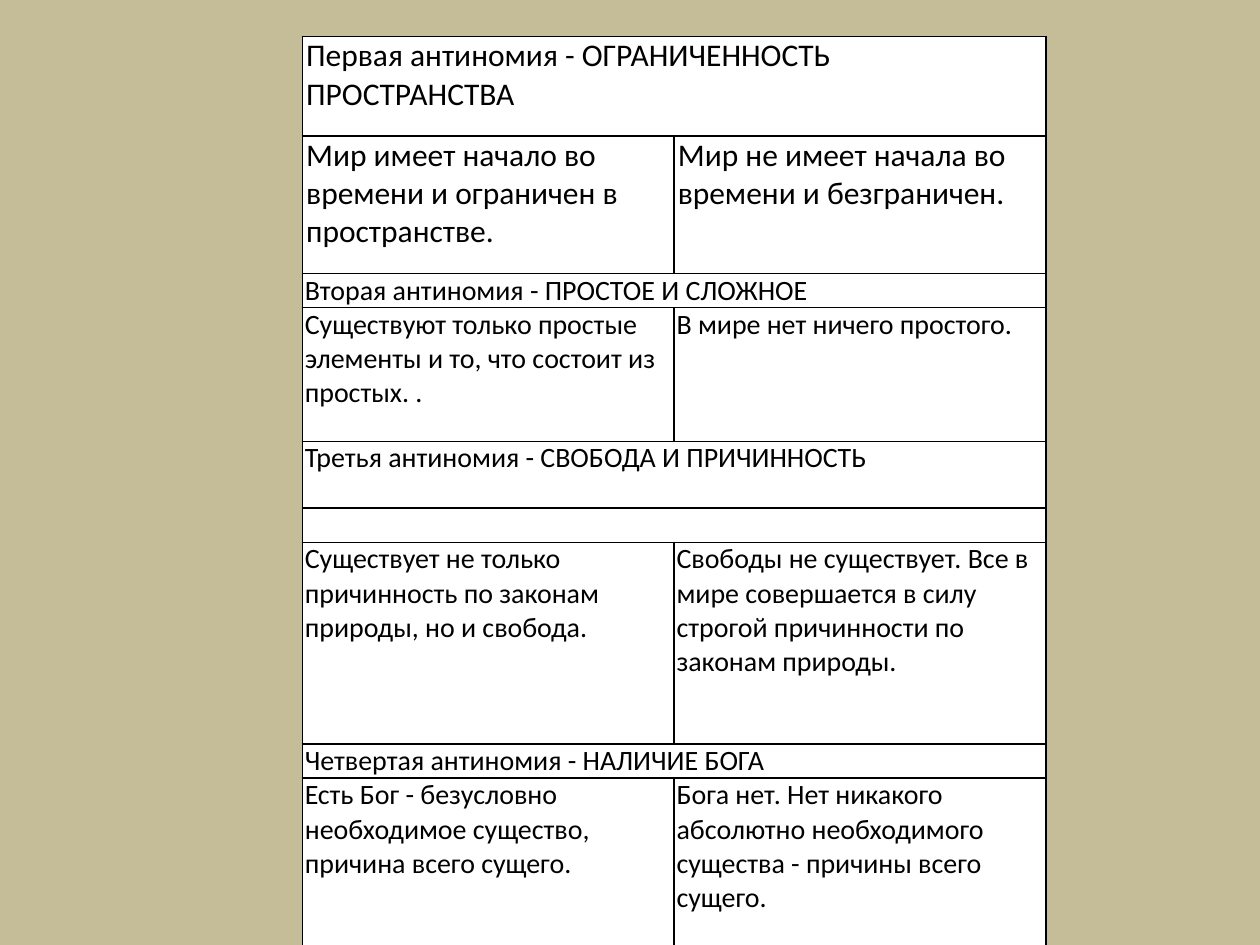
from dataclasses import dataclass

from lxml import etree
from pptx import Presentation
from pptx.dml.color import RGBColor
from pptx.oxml.ns import qn
from pptx.util import Inches, Pt

BLANK_LAYOUT = 6
BORDER_SIDES = ("a:lnL", "a:lnR", "a:lnT", "a:lnB")


@dataclass(frozen=True)
class Theme:
    font: str = "Calibri"
    background: str = "C4BD97"
    cell: str = "FFFFFF"
    ink: str = "000000"
    large: int = 18
    regular: int = 16
    border: int = 1


class SlideBuilder:
    def __init__(self, prs, theme):
        self.theme = theme
        self.s = prs.slides.add_slide(prs.slide_layouts[BLANK_LAYOUT])
        fill = self.s.background.fill
        fill.solid()
        fill.fore_color.rgb = RGBColor.from_string(theme.background)

    def table(self, left, top, col_width, rows, size, inset):
        """Rows are (height, texts); a row with one text spans both columns."""
        height = sum(h for h, _ in rows)
        table = self.s.shapes.add_table(
            len(rows), 2, Inches(left), Inches(top),
            Inches(2 * col_width), Inches(height)).table
        table.first_row = table.horz_banding = False
        for col in table.columns:
            col.width = Inches(col_width)
        for i, (row_height, texts) in enumerate(rows):
            table.rows[i].height = Inches(row_height)
            left_cell, right_cell = table.cell(i, 0), table.cell(i, 1)
            for cell in (left_cell, right_cell):
                self.style_cell(cell, inset)
            if len(texts) == 1:
                left_cell.merge(right_cell)
            for cell, text in zip((left_cell, right_cell), texts):
                self.cell_text(cell, text, size)

    def style_cell(self, cell, inset):
        cell.margin_left = cell.margin_right = Inches(inset)
        cell.margin_top = cell.margin_bottom = 0
        tcPr = cell._tc.get_or_add_tcPr()
        for side in BORDER_SIDES:
            ln = etree.SubElement(tcPr, qn(side), w=str(Pt(self.theme.border)))
            solid = etree.SubElement(ln, qn("a:solidFill"))
            etree.SubElement(solid, qn("a:srgbClr"), val=self.theme.ink)
        cell.fill.solid()
        cell.fill.fore_color.rgb = RGBColor.from_string(self.theme.cell)

    def cell_text(self, cell, text, size):
        p = cell.text_frame.paragraphs[0]
        if not text:
            # An empty cell still takes its line height from the end mark
            etree.SubElement(p._p, qn("a:endParaRPr"), sz=str(size * 100))
            return
        r = p.add_run()
        r.text = text
        r.font.name = self.theme.font
        r.font.size = Pt(size)
        r.font.color.rgb = RGBColor.from_string(self.theme.ink)


FIRST_ANTINOMY = [
    (0.79, ["Первая антиномия - ОГРАНИЧЕННОСТЬ ПРОСТРАНСТВА"]),
    (1.1, ["Мир имеет начало во времени и ограничен в пространстве.",
           "Мир не имеет начала во времени и безграничен."]),
]
OTHER_ANTINOMIES = [
    (0.27, ["Вторая антиномия - ПРОСТОЕ И СЛОЖНОЕ"]),
    (1.06, ["Существуют только простые элементы и то, что состоит из простых. .",
            "В мире нет ничего простого."]),
    (0.53, ["Третья антиномия - СВОБОДА И ПРИЧИННОСТЬ"]),
    (0.27, [""]),
    (1.6, ["Существует не только причинность по законам природы, но и свобода.",
           "Свободы не существует. Все в мире совершается в силу "
           "строгой причинности по законам природы."]),
    (0.27, ["Четвертая антиномия - НАЛИЧИЕ БОГА"]),
    (1.33, ["Есть Бог - безусловно необходимое существо, причина всего сущего.",
            "Бога нет. Нет никакого абсолютно необходимого существа - "
            "причины всего сущего."]),
]


def main():
    prs = Presentation()
    prs.slide_width, prs.slide_height = Inches(10), Inches(7.5)
    theme = Theme()
    builder = SlideBuilder(prs, theme)
    left, col_width = 2.4, 2.95
    builder.table(left, 0.29, col_width, FIRST_ANTINOMY, theme.large, 0.03)
    builder.table(left, 2.17, col_width, OTHER_ANTINOMIES, theme.regular, 0.02)
    prs.save("out.pptx")


if __name__ == "__main__":
    main()
